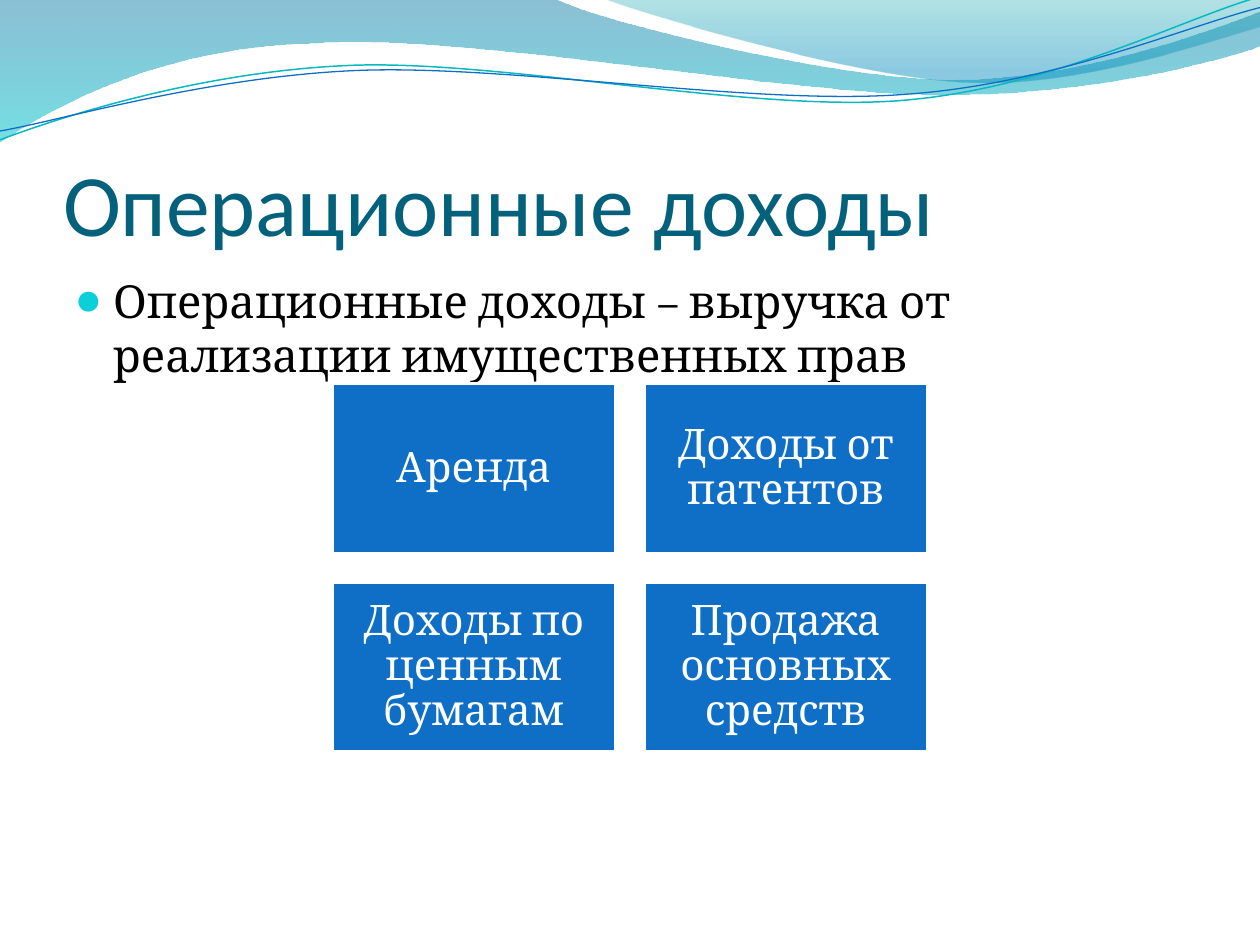
"""Build the slide on operating income: a wave header, a title, a bullet and four income boxes."""
from lxml.etree import SubElement
from pptx import Presentation
from pptx.dml.color import RGBColor
from pptx.enum.shapes import MSO_SHAPE
from pptx.enum.text import MSO_ANCHOR, MSO_AUTO_SIZE, PP_ALIGN
from pptx.oxml.ns import qn
from pptx.util import Cm, Pt

COLORS = {
    "title": "04617B", "text": "000000", "bullet": "0BD0D9", "box": "0F6FC6", "white": "FFFFFF",
    "teal line": "0AB8BF", "blue line": "0F6FC6",
    "wave top": "0074A1", "wave bottom": "00C6CF", "crest top": "00A1A9", "crest bottom": "008BBF",
}
INCH = 2.54
UNITS = 1000


def color(name):
    return RGBColor.from_string(COLORS[name])


def draw_outline(page, segments, closed):
    """Draw segments in inches: pairs are straight lines, six numbers are Bézier curves."""
    points = [(s[i] * UNITS, s[i + 1] * UNITS) for s in segments for i in range(0, len(s), 2)]
    builder = page.shapes.build_freeform(*points[0], scale=Cm(INCH) / UNITS)
    builder.add_line_segments(points[1:], close=closed)
    outline = builder.convert_to_shape()
    outline.shadow.inherit = False
    lines = outline._element.iter(qn("a:lnTo"))
    lines = iter(list(lines))
    for segment in segments[1:]:
        first = next(lines)
        if len(segment) == 6:
            first.tag = qn("a:cubicBezTo")
            for _ in range(2):
                extra = next(lines)
                first.append(extra[0])
                extra.getparent().remove(extra)
    return outline


deck = Presentation()
deck.slide_width, deck.slide_height = Cm(25.4), Cm(19.05)
page = deck.slides.add_slide(deck.slide_layouts[5])

wave = [(0, 0), (4.4, -0.01), (4.76, 0.17, 6.64, 0.63, 7.58, 0.63), (8.53, 0.63, 9.58, 0.26, 10, 0.09),
        (10.01, 0.36), (9.83, 0.44, 8.7, 0.76, 7.46, 0.75), (6.22, 0.75, 3.82, 0.28, 2.57, 0.34),
        (1.29, 0.36, 0.46, 0.83, -0.01, 1.13)]
crest = [(4.79, -0.01), (5.09, 0.11, 6.82, 0.62, 7.69, 0.65), (8.56, 0.69, 9.61, 0.32, 10, 0.21), (10, 0)]
bands = [
    (wave, [("wave top", 0, 45), ("wave bottom", 1, 55)]),
    (crest, [("crest top", 0, 30), ("crest bottom", 0.8, 45)]),
]
for segments, stops in bands:
    band = draw_outline(page, segments, True)
    band.line.fill.background()
    band.fill.gradient()
    band.fill.gradient_angle = 270
    for stop, (name, position, _) in zip(band.fill.gradient_stops, stops):
        stop.color.rgb = color(name)
        stop.position = position
    tints = band._element.spPr.iter(qn("a:srgbClr"))
    for tint, (_, _, opacity) in zip(tints, stops):
        SubElement(tint, qn("a:alpha"), val=str(opacity * 1000))

strands = [
    ([(0, 1.11), (0.48, 0.93, 1.58, 0.57, 2.77, 0.52), (3.95, 0.47, 5.93, 0.89, 7.13, 0.8),
      (8.33, 0.71, 9.38, 0.15, 9.98, -0.02)], "teal line", 0.85),
    ([(0, 1.04), (0.47, 0.96, 1.64, 0.61, 2.83, 0.56), (4.03, 0.51, 5.97, 0.84, 7.17, 0.75),
      (8.36, 0.67, 9.41, 0.21, 10, 0.06)], "blue line", 0.75),
]
for segments, name, width in strands:
    strand = draw_outline(page, segments, False)
    strand.fill.background()
    strand.line.color.rgb = color(name)
    strand.line.width = Pt(width)

title = page.shapes.title
title.left, title.top, title.width, title.height = Cm(1.27), Cm(1.95), Cm(22.86), Cm(3.17)
frame = title.text_frame
frame.text = "Операционные доходы"
frame.auto_size = MSO_AUTO_SIZE.NONE
frame.vertical_anchor = MSO_ANCHOR.BOTTOM
frame.margin_left = frame.margin_right = frame.margin_bottom = 0
para = frame.paragraphs[0]
para.alignment = PP_ALIGN.LEFT
para.font.name, para.font.size = "Calibri", Pt(50)
para.font.color.rgb = color("title")

body = page.shapes.add_textbox(Cm(1.27), Cm(5.37), Cm(22.86), Cm(12.19))
frame = body.text_frame
frame.word_wrap = True
para = frame.paragraphs[0]
para.text = "Операционные доходы – выручка от реализации имущественных прав"
para.space_before = Pt(5.2)
para.font.name, para.font.size = "Cambria", Pt(26)
para.font.color.rgb = color("text")
properties = para._p.get_or_add_pPr()
properties.set("marL", str(Cm(0.76)))
properties.set("indent", str(-Cm(0.76)))
bullet_color = SubElement(properties, qn("a:buClr"))
SubElement(bullet_color, qn("a:srgbClr"), val=COLORS["bullet"])
SubElement(properties, qn("a:buSzPct"), val="95000")
SubElement(properties, qn("a:buFont"), typeface="Calibri")
SubElement(properties, qn("a:buChar"), char="●")
properties.append(properties.find(qn("a:defRPr")))

incomes = ["Аренда", "Доходы от патентов", "Доходы по ценным бумагам", "Продажа основных средств"]
box_width, box_height, gap = 5.72, 3.43, 0.57
for index, income in enumerate(incomes):
    row, column = divmod(index, 2)
    box = page.shapes.add_shape(
        MSO_SHAPE.RECTANGLE,
        Cm(6.69 + column * (box_width + gap)), Cm(7.73 + row * (box_height + gap)),
        Cm(box_width), Cm(box_height))
    box.shadow.inherit = False
    box.fill.solid()
    box.fill.fore_color.rgb = color("box")
    box.line.color.rgb = color("white")
    box.line.width = Pt(2)
    frame = box.text_frame
    frame.word_wrap = True
    frame.vertical_anchor = MSO_ANCHOR.MIDDLE
    frame.margin_left = frame.margin_right = frame.margin_top = frame.margin_bottom = Cm(0.25)
    para = frame.paragraphs[0]
    para.text = income
    para.alignment = PP_ALIGN.CENTER
    para.line_spacing = 0.9
    para.font.name, para.font.size = "Cambria", Pt(24)
    para.font.color.rgb = color("white")

deck.save("out.pptx")
